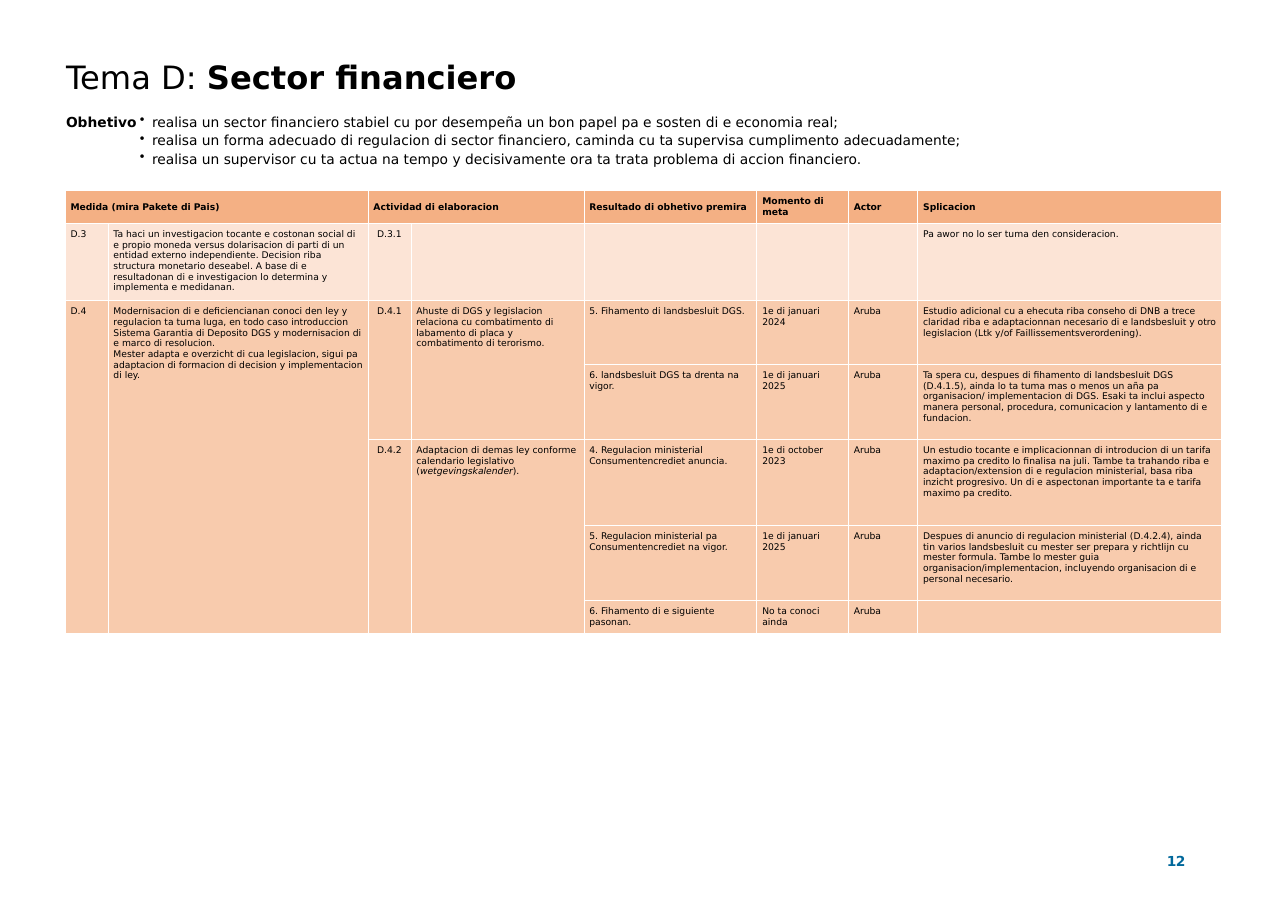
from lxml import etree
from pptx import Presentation
from pptx.dml.color import RGBColor
from pptx.enum.text import MSO_ANCHOR, PP_ALIGN
from pptx.oxml.ns import qn
from pptx.util import Inches, Pt

TOP, MIDDLE = MSO_ANCHOR.TOP, MSO_ANCHOR.MIDDLE
LEFT, CENTER = PP_ALIGN.LEFT, PP_ALIGN.CENTER

FONT = "DejaVu Sans"
BLACK = RGBColor(0x00, 0x00, 0x00)
BLUE = RGBColor(0x01, 0x68, 0x9B)
HEADER_FILL = RGBColor(0xF4, 0xB0, 0x84)
PALE_FILL = RGBColor(0xFC, 0xE4, 0xD6)
PEACH_FILL = RGBColor(0xF8, 0xCB, 0xAD)

# Content
TITLE = ("Tema D: ", "Sector financiero")
OBJECTIVE_LABEL = "Obhetivo"
OBJECTIVES = [
    "realisa un sector financiero stabiel cu por desempeña un bon papel pa e sosten di e economia real;",
    "realisa un forma adecuado di regulacion di sector financiero, caminda cu ta supervisa cumplimento adecuadamente;",
    "realisa un supervisor cu ta actua na tempo y decisivamente ora ta trata problema di accion financiero.",
]
PAGE_NUMBER = "12"
ITALIC_WORD = "wetgevingskalender"
HEADERS = ["Medida (mira Pakete di Pais)", "", "Actividad di elaboracion", "",
           "Resultado di obhetivo premira", "Momento di meta", "Actor", "Splicacion"]
ROWS = [
    ["D.3",
     "Ta haci un investigacion tocante e costonan social di e propio moneda versus dolarisacion di parti di un "
     "entidad externo independiente. Decision riba structura monetario deseabel. A base di e resultadonan di e "
     "investigacion lo determina y implementa e medidanan.",
     "D.3.1", "", "", "", "", "Pa awor no lo ser tuma den consideracion."],
    ["D.4",
     "Modernisacion di e deficiencianan conoci den ley y regulacion ta tuma luga, en todo caso introduccion "
     "Sistema Garantia di Deposito DGS y modernisacion di e marco di resolucion.\v"
     "Mester adapta e overzicht di cua legislacion, sigui pa adaptacion di formacion di decision y "
     "implementacion di ley.",
     "D.4.1",
     "Ahuste di DGS y legislacion relaciona cu combatimento di labamento di placa y combatimento di terorismo.",
     "5. Fihamento di landsbesluit DGS.", "1e di januari 2024", "Aruba",
     "Estudio adicional cu a ehecuta riba conseho di DNB a trece claridad riba e adaptacionnan necesario di e "
     "landsbesluit y otro legislacion (Ltk y/of Faillissementsverordening)."],
    ["", "", "", "", "6. landsbesluit DGS ta drenta na vigor.", "1e di januari 2025", "Aruba",
     "Ta spera cu, despues di fihamento di landsbesluit DGS (D.4.1.5), ainda lo ta tuma mas o menos un aña pa "
     "organisacion/ implementacion di DGS. Esaki ta inclui aspecto manera personal, procedura, comunicacion y "
     "lantamento di e fundacion."],
    ["", "", "D.4.2", "Adaptacion di demas ley conforme calendario legislativo (wetgevingskalender).",
     "4. Regulacion ministerial Consumentencrediet anuncia.", "1e di october 2023", "Aruba",
     "Un estudio tocante e implicacionnan di introducion di un tarifa maximo pa credito lo finalisa na juli. "
     "Tambe ta trahando riba e adaptacion/extension di e regulacion ministerial, basa riba inzicht progresivo. "
     "Un di e aspectonan importante ta e tarifa maximo pa credito."],
    ["", "", "", "", "5. Regulacion ministerial pa Consumentencrediet na vigor.", "1e di januari 2025", "Aruba",
     "Despues di anuncio di regulacion ministerial (D.4.2.4), ainda tin varios landsbesluit cu mester ser "
     "prepara y richtlijn cu mester formula. Tambe lo mester guia organisacion/implementacion, incluyendo "
     "organisacion di e personal necesario."],
    ["", "", "", "", "6. Fihamento di e siguiente pasonan.", "No ta conoci ainda", "Aruba", ""],
]
# Merged areas: first row, first column, last row, last column
MERGES = [(0, 0, 0, 1), (0, 2, 0, 3), (2, 0, 6, 0), (2, 1, 6, 1),
          (2, 2, 3, 2), (2, 3, 3, 3), (4, 2, 6, 2), (4, 3, 6, 3)]

# Grid, in inches
MARGIN_LEFT = 0.59
TABLE_TOP = 1.73
COLUMN_WIDTHS = [0.39, 2.36, 0.39, 1.57, 1.57, 0.83, 0.63, 2.76]
ROW_HEIGHTS = [0.3, 0.7, 0.58, 0.68, 0.78, 0.68, 0.3]
CODE_COLUMN = 2


def style_font(font, size, bold=False, color=BLACK):
    font.name, font.size, font.bold = FONT, Pt(size), bold
    font.color.rgb = color


def add_text(slide, left, top, width, height, lines, size, bold=False, color=BLACK, inset_top=0.01):
    shape = slide.shapes.add_textbox(Inches(left), Inches(top), Inches(width), Inches(height))
    frame = shape.text_frame
    frame.margin_left = frame.margin_right = frame.margin_bottom = 0
    frame.margin_top = Inches(inset_top)
    frame.word_wrap = True
    frame.text = "\n".join(lines)
    for paragraph in frame.paragraphs:
        for run in paragraph.runs:
            style_font(run.font, size, bold, color)
    return frame


def add_bullet(paragraph):
    properties = paragraph._p.get_or_add_pPr()
    properties.set("marL", str(Inches(0.12)))
    properties.set("indent", str(Inches(-0.11)))
    etree.SubElement(properties, qn("a:buChar"), char="•")


def add_white_borders(cell):
    properties = cell._tc.get_or_add_tcPr()
    for position, side in enumerate(("lnL", "lnR", "lnT", "lnB")):
        line = etree.Element(qn("a:" + side), w=str(Pt(0.5)))
        fill = etree.SubElement(line, qn("a:solidFill"))
        etree.SubElement(fill, qn("a:srgbClr"), val="FFFFFF")
        properties.insert(position, line)


def fill_cell(cell, text, fill, bold, anchor, alignment):
    cell.margin_left = cell.margin_right = cell.margin_top = cell.margin_bottom = Inches(0.05)
    cell.vertical_anchor = anchor
    cell.fill.solid()
    cell.fill.fore_color.rgb = fill
    add_white_borders(cell)
    paragraph = cell.text_frame.paragraphs[0]
    paragraph.alignment = alignment
    if not text:
        # Keeps an empty cell from stretching its row
        etree.SubElement(paragraph._p, qn("a:endParaRPr"), sz="600")
    elif ITALIC_WORD in text:
        before, after = text.split(ITALIC_WORD)
        for part in (before, ITALIC_WORD, after):
            run = paragraph.add_run()
            run.text = part
            run.font.italic = part == ITALIC_WORD
    else:
        paragraph.text = text
    for run in paragraph.runs:
        style_font(run.font, 6, bold)


def add_measures_table(slide):
    table = slide.shapes.add_table(
        len(ROW_HEIGHTS), len(COLUMN_WIDTHS), Inches(MARGIN_LEFT), Inches(TABLE_TOP),
        Inches(sum(COLUMN_WIDTHS)), Inches(sum(ROW_HEIGHTS))).table
    table.first_row = table.horz_banding = False
    for column, width in zip(table.columns, COLUMN_WIDTHS):
        column.width = Inches(width)
    for row, height in zip(table.rows, ROW_HEIGHTS):
        row.height = Inches(height)
    row_fills = [HEADER_FILL, PALE_FILL] + [PEACH_FILL] * (len(ROWS) - 1)
    for r, (texts, fill) in enumerate(zip([HEADERS] + ROWS, row_fills)):
        is_header = r == 0
        for c, text in enumerate(texts):
            centred = c == CODE_COLUMN and not is_header
            fill_cell(table.cell(r, c), text, fill, is_header,
                      MIDDLE if is_header else TOP, CENTER if centred else LEFT)
    for top, left, bottom, right in MERGES:
        table.cell(top, left).merge(table.cell(bottom, right))


def main():
    presentation = Presentation()
    presentation.slide_width, presentation.slide_height = Inches(11.69), Inches(8.27)
    slide = presentation.slides.add_slide(presentation.slide_layouts[6])

    # Title
    title = add_text(slide, MARGIN_LEFT + 0.01, 0.51, 4.36, 0.37, [TITLE[0]], 21)
    run = title.paragraphs[0].add_run()
    run.text = TITLE[1]
    style_font(run.font, 21, bold=True)

    # Objective
    add_text(slide, MARGIN_LEFT + 0.01, 1.02, 0.67, 0.17, [OBJECTIVE_LABEL], 9, bold=True)
    objectives = add_text(slide, 1.26, 1, 8.98, 0.51, OBJECTIVES, 9, inset_top=0.03)
    for index, paragraph in enumerate(objectives.paragraphs):
        if index:
            paragraph.space_before = Pt(1.2)
        add_bullet(paragraph)

    # Measures
    add_measures_table(slide)

    # Page number
    number = add_text(slide, 10.59, 7.74, 0.25, 0.15, [PAGE_NUMBER], 9, True, BLUE, inset_top=0)
    number.paragraphs[0].runs[0].font._element.set("spc", "-30")

    presentation.save("out.pptx")


if __name__ == "__main__":
    main()
